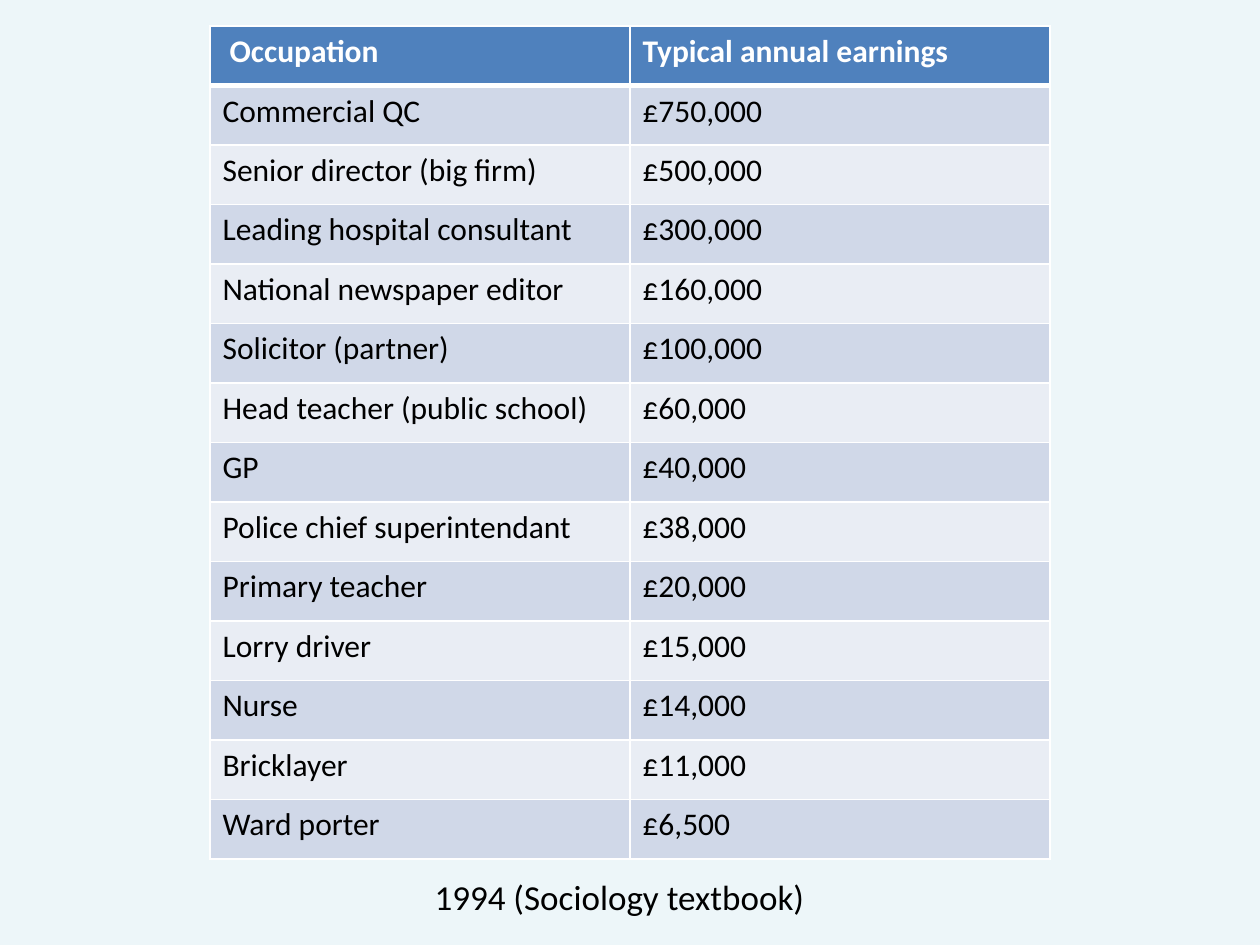
from lxml import etree
from pptx import Presentation
from pptx.dml.color import RGBColor
from pptx.enum import text
from pptx.oxml import ns
from pptx.util import Pt

BACKGROUND = RGBColor(0xED, 0xF6, 0xF9)
HEADER = RGBColor(0x4F, 0x81, 0xBD)
BANDS = [RGBColor(0xE9, 0xED, 0xF4), RGBColor(0xD0, 0xD8, 0xE8)]
WHITE = RGBColor(0xFF, 0xFF, 0xFF)
BLACK = RGBColor(0x00, 0x00, 0x00)

EARNINGS = [
    (" Occupation", "Typical annual earnings"),
    ("Commercial QC", "£750,000"),
    ("Senior director (big firm)", "£500,000"),
    ("Leading hospital consultant", "£300,000"),
    ("National newspaper editor", "£160,000"),
    ("Solicitor (partner)", "£100,000"),
    ("Head teacher (public school)", "£60,000"),
    ("GP", "£40,000"),
    ("Police chief superintendant", "£38,000"),
    ("Primary teacher", "£20,000"),
    ("Lorry driver", "£15,000"),
    ("Nurse", "£14,000"),
    ("Bricklayer", "£11,000"),
    ("Ward porter", "£6,500"),
]
ROW_HEIGHT = 34
COLUMN_WIDTH = 240


def add_span(para, words, size, color, bold=False):
    span = para.add_run()
    span.text = words
    span.font.name = "Calibri"
    span.font.size = Pt(size)
    span.font.bold = bold
    span.font.color.rgb = color


def set_borders(cell, widths):
    """Draw white borders; widths maps a side (L, R, T, B) to points."""
    properties = cell._tc.get_or_add_tcPr()
    for position, (side, width) in enumerate(widths.items()):
        line = etree.Element(ns.qn(f"a:ln{side}"), w=str(Pt(width)))
        fill = etree.SubElement(line, ns.qn("a:solidFill"))
        etree.SubElement(fill, ns.qn("a:srgbClr"), val=str(WHITE))
        properties.insert(position, line)


deck = Presentation()
deck.slide_width, deck.slide_height = Pt(720), Pt(540)
page = deck.slides.add_slide(deck.slide_layouts[6])
page.background.fill.solid()
page.background.fill.fore_color.rgb = BACKGROUND

# Earnings table
table = page.shapes.add_table(
    len(EARNINGS), 2, Pt(120), Pt(15),
    Pt(2 * COLUMN_WIDTH), Pt(len(EARNINGS) * ROW_HEIGHT)).table
for column in table.columns:
    column.width = Pt(COLUMN_WIDTH)

for row, entries in enumerate(EARNINGS):
    table.rows[row].height = Pt(ROW_HEIGHT)
    is_header = row == 0
    for column, words in enumerate(entries):
        cell = table.cell(row, column)
        cell.fill.solid()
        cell.fill.fore_color.rgb = HEADER if is_header else BANDS[row % 2]
        # The rule below the header is thicker than the others
        set_borders(cell, {"L": 1, "R": 1, "T": 3 if row == 1 else 1,
                           "B": 3 if is_header else 1})
        add_span(cell.text_frame.paragraphs[0], words, 18,
                 WHITE if is_header else BLACK, is_header)

# Source caption
box = page.shapes.add_textbox(Pt(36.5), Pt(497), Pt(635), Pt(31.5))
box.text_frame.word_wrap = True
box.text_frame.auto_size = text.MSO_AUTO_SIZE.SHAPE_TO_FIT_TEXT
para = box.text_frame.paragraphs[0]
para.alignment = text.PP_ALIGN.CENTER
add_span(para, "1994 (Sociology textbook)", 20, BLACK)

deck.save("out.pptx")
